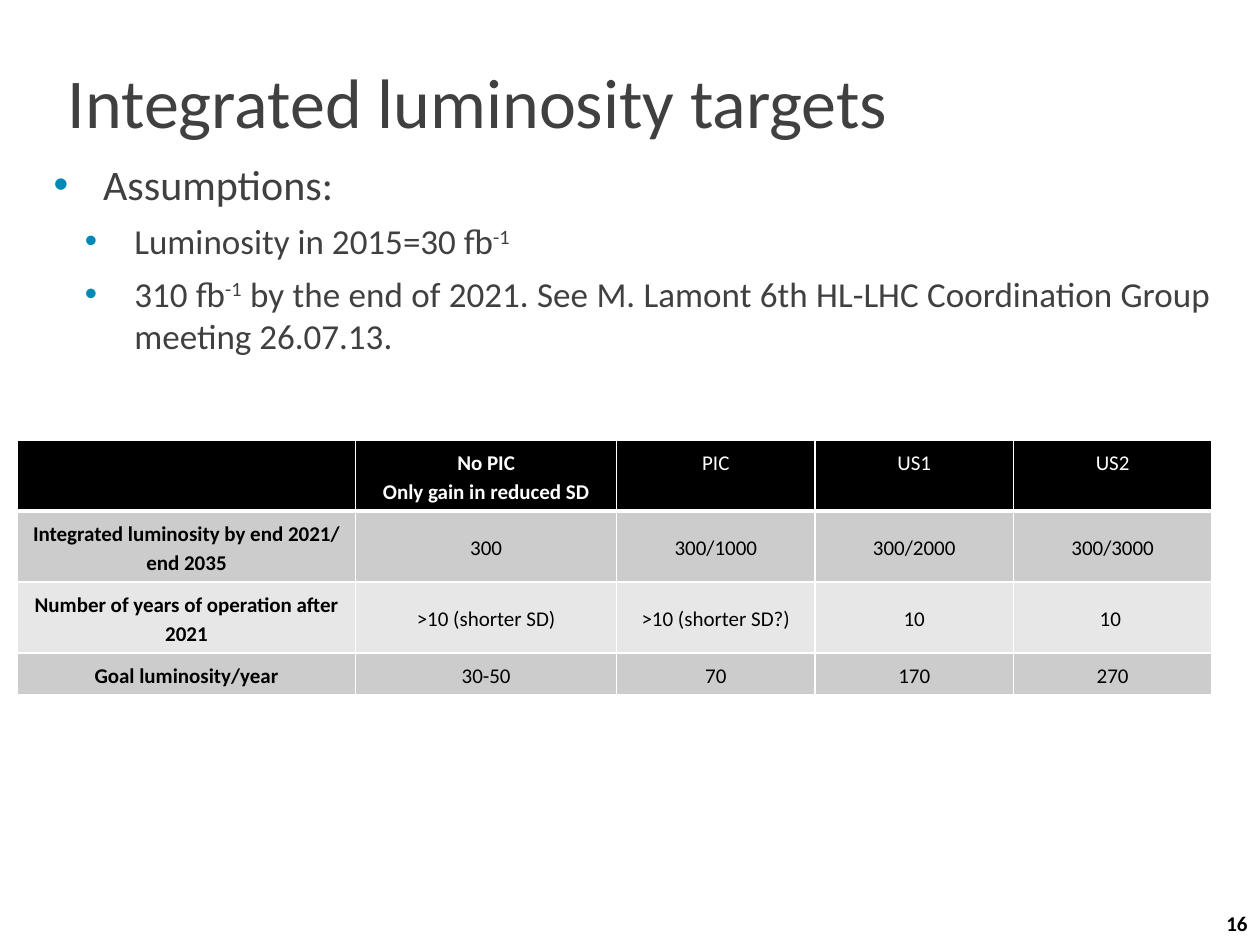
from dataclasses import dataclass

from lxml.etree import SubElement
from pptx import Presentation
from pptx.dml.color import RGBColor
from pptx.enum.text import MSO_ANCHOR, PP_ALIGN
from pptx.oxml.ns import qn
from pptx.util import Cm, Pt


@dataclass(frozen=True)
class Theme:
    font: str = "Calibri"
    text: str = "404040"
    accent: str = "0089B5"
    dark: str = "000000"
    light: str = "FFFFFF"
    bands: tuple = ("CCCCCC", "E7E7E7")
    title: int = 40
    body: int = 24
    sub: int = 20
    small: int = 12


def write(p, text, *, font, size, color, bold=False, align=None, line=None, before=None):
    """Fill a paragraph; parts between ^ marks become superscript."""
    p.alignment = align
    if line:
        p.line_spacing = line
    if before is not None:
        p.space_before = Pt(before)
    for i, part in enumerate(text.split("^")):
        if not part:
            continue
        r = p.add_run()
        r.text = part
        r.font.name, r.font.size, r.font.bold = font, Pt(size), bold
        r.font.color.rgb = RGBColor.from_string(color)
        if i % 2:
            r._r.get_or_add_rPr().set("baseline", "30000")


def add_bullet(p, color, left, hanging):
    pPr = p._p.get_or_add_pPr()
    pPr.set("marL", str(Cm(left)))
    pPr.set("indent", str(-Cm(hanging)))
    SubElement(SubElement(pPr, qn("a:buClr")), qn("a:srgbClr"), val=color)
    SubElement(pPr, qn("a:buFont"), typeface="Arial")
    SubElement(pPr, qn("a:buChar"), char="•")


def add_border(cell, side, color, width):
    ln = SubElement(cell._tc.get_or_add_tcPr(), qn(f"a:ln{side}"), w=str(Pt(width)))
    SubElement(SubElement(ln, qn("a:solidFill")), qn("a:srgbClr"), val=color)


class SlideBuilder:
    def __init__(self, s, theme):
        self.s, self.theme = s, theme

    def text_box(self, box, inset, anchor=MSO_ANCHOR.TOP):
        tf = self.s.shapes.add_textbox(*map(Cm, box)).text_frame
        tf.word_wrap = True
        tf.vertical_anchor = anchor
        tf.margin_left = tf.margin_right = Cm(inset)
        tf.margin_top = tf.margin_bottom = 0
        return tf

    def label(self, box, text, inset=0.25, **fmt):
        tf = self.text_box(box, inset, MSO_ANCHOR.MIDDLE)
        write(tf.paragraphs[0], text, font=self.theme.font, **fmt)

    def bullets(self, box, items):
        t = self.theme
        tf = self.text_box(box, 0.25)
        for i, (level, text) in enumerate(items):
            p = tf.add_paragraph() if i else tf.paragraphs[0]
            p.level = level
            add_bullet(p, t.accent, 2.13 if level else 1.5, 1)
            write(p, text, font=t.font, size=t.sub if level else t.body,
                  color=t.text, align=PP_ALIGN.JUSTIFY,
                  line=None if level else 1.2, before=6 if i else None)

    def cell(self, cell, text, fill, color, bold, header):
        t = self.theme
        cell.margin_left = cell.margin_right = Cm(0.1)
        cell.margin_top = cell.margin_bottom = Cm(0.13)
        cell.vertical_anchor = MSO_ANCHOR.TOP if header else MSO_ANCHOR.MIDDLE
        for side in "LRTB":
            add_border(cell, side, t.light, 3 if header and side == "B" else 1)
        cell.fill.solid()
        cell.fill.fore_color.rgb = RGBColor.from_string(fill)
        tf = cell.text_frame
        for i, line in enumerate(text.split("\n")):
            p = tf.add_paragraph() if i else tf.paragraphs[0]
            write(p, line, font=t.font, size=t.small, color=color, bold=bold,
                  align=PP_ALIGN.CENTER, line=1.15)

    def table(self, left, top, widths, heights, rows):
        t = self.theme
        table = self.s.shapes.add_table(
            len(rows), len(widths), Cm(left), Cm(top),
            Cm(sum(widths)), Cm(sum(heights))).table
        for column, width in zip(table.columns, widths):
            column.width = Cm(width)
        for row, height in zip(table.rows, heights):
            row.height = Cm(height)
        for i, row in enumerate(rows):
            header = i == 0
            fill = t.dark if header else t.bands[(i - 1) % 2]
            for j, text in enumerate(row):
                bold = j == 1 if header else j == 0
                self.cell(table.cell(i, j), text, fill,
                          t.light if header else t.dark, bold, header)


ASSUMPTIONS = [
    (0, "Assumptions:"),
    (1, "Luminosity in 2015=30 fb^-1^"),
    (1, "310 fb^-1^ by the end of 2021. See M. Lamont 6th HL-LHC "
        "Coordination Group meeting 26.07.13."),
]
TARGETS = [
    ["", "No PIC\nOnly gain in reduced SD", "PIC", "US1", "US2"],
    ["Integrated luminosity by end 2021/ end 2035",
     "300", "300/1000", "300/2000", "300/3000"],
    ["Number of years of operation after 2021",
     ">10 (shorter SD)", ">10 (shorter SD?)", "10", "10 "],
    ["Goal luminosity/year", "30-50", "70", "170", "270"],
]


def main():
    prs = Presentation()
    prs.slide_width, prs.slide_height = Cm(25.4), Cm(19.05)
    theme = Theme()
    slide = SlideBuilder(prs.slides.add_slide(prs.slide_layouts[6]), theme)
    slide.label((1.27, 0.76, 22.86, 2.54), "Integrated luminosity targets",
                inset=0.1, size=theme.title, color=theme.text)
    slide.table(0.35, 8.87, [6.82, 5.26] + [4] * 3, [1.43] * 3 + [0.84], TARGETS)
    slide.bullets((0.33, 3, 24.33, 3.68), ASSUMPTIONS)
    slide.label((24.13, 18.16, 1.27, 0.89), "16", size=theme.small,
                color=theme.dark, bold=True, align=PP_ALIGN.RIGHT)
    prs.save("out.pptx")


if __name__ == "__main__":
    main()
